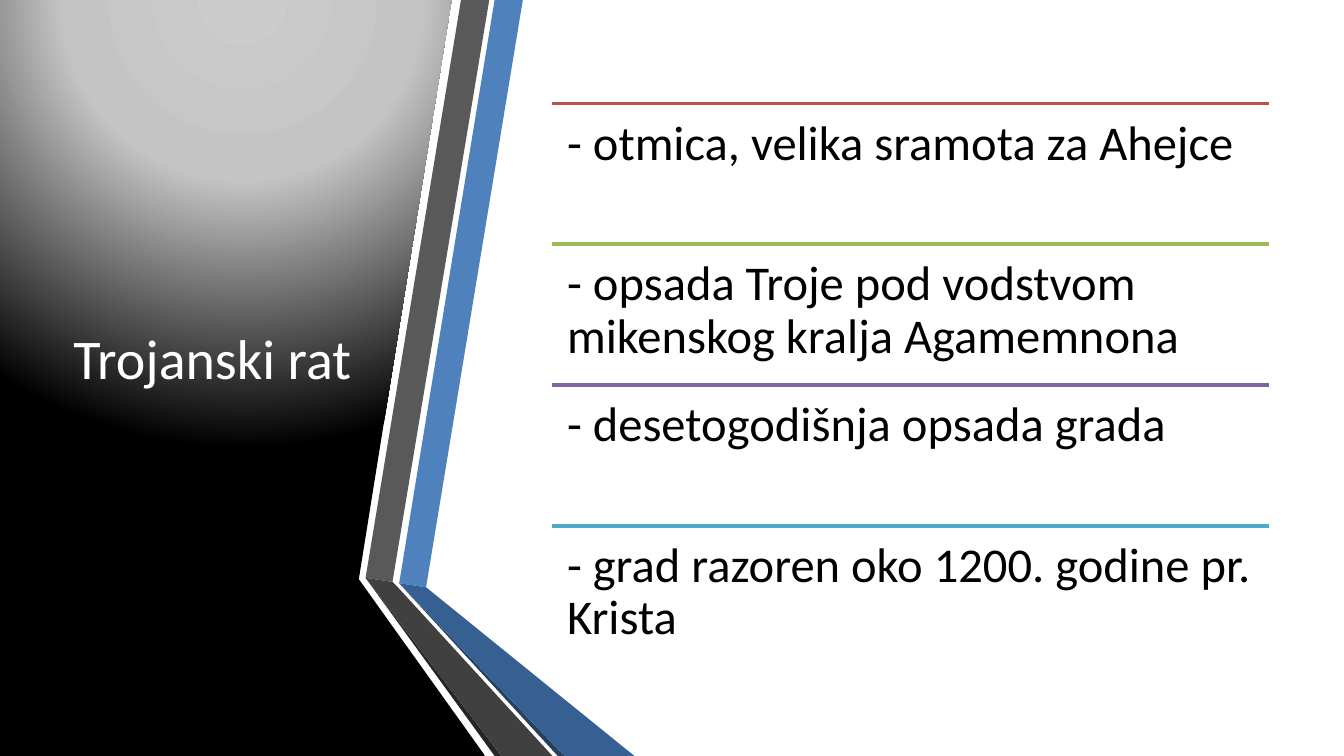
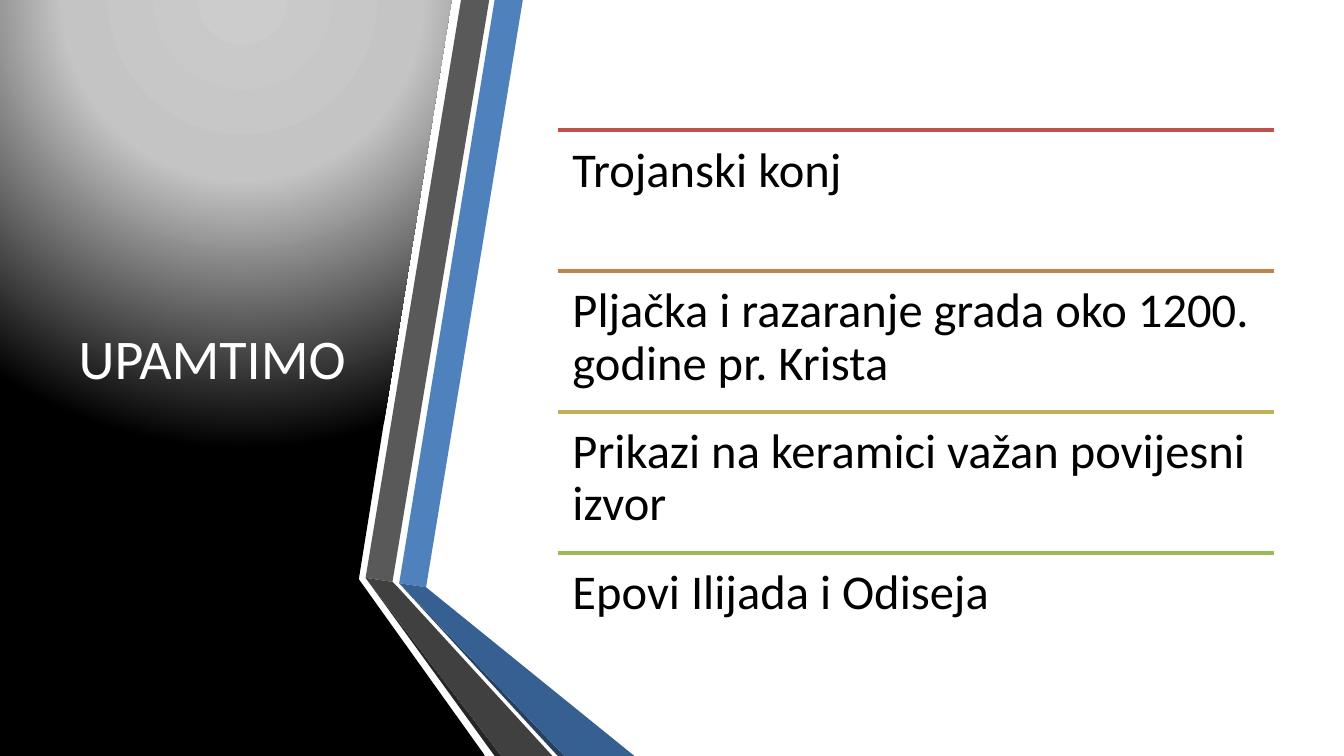
"""Build two history slides with a folded ribbon panel and ruled statements."""
from dataclasses import dataclass

from lxml import etree
from pptx import Presentation
from pptx.dml.color import RGBColor
from pptx.enum.shapes import MSO_CONNECTOR
from pptx.enum.text import MSO_ANCHOR, PP_ALIGN
from pptx.oxml import parse_xml
from pptx.oxml.ns import nsdecls, qn
from pptx.presentation import Presentation as PresentationType
from pptx.shapes.autoshape import Shape
from pptx.slide import Slide
from pptx.util import Inches, Pt

STRAIGHT = MSO_CONNECTOR.STRAIGHT
TOP, MIDDLE = MSO_ANCHOR.TOP, MSO_ANCHOR.MIDDLE
LEFT, CENTER = PP_ALIGN.LEFT, PP_ALIGN.CENTER

WHITE = RGBColor(0xFF, 0xFF, 0xFF)
BLACK = RGBColor(0x00, 0x00, 0x00)
BLUE = RGBColor(0x4F, 0x81, 0xBD)
BLUE_FOLD = RGBColor(0x37, 0x60, 0x92)
BLUE_SHADE = RGBColor(0x25, 0x40, 0x61)
GRAY = RGBColor(0x59, 0x59, 0x59)
GRAY_FOLD = RGBColor(0x40, 0x40, 0x40)
GRAY_SHADE = RGBColor(0x26, 0x26, 0x26)
RED = RGBColor(0xC0, 0x50, 0x4D)
ORANGE = RGBColor(0xBE, 0x83, 0x51)
OLIVE = RGBColor(0xBD, 0xB2, 0x55)
GREEN = RGBColor(0x9B, 0xBB, 0x59)
PURPLE = RGBColor(0x80, 0x64, 0xA2)
TEAL = RGBColor(0x4B, 0xAC, 0xC6)
PANEL_STOPS = (
    (0, RGBColor(0xCC, 0xCC, 0xCC)),
    (40, RGBColor(0xC4, 0xC4, 0xC4)),
    (100, BLACK),
)

FONT = "Calibri"
SLIDE_WIDTH = 10
SLIDE_HEIGHT = SLIDE_WIDTH * 9 / 16
LIST_WIDTH, LIST_HEIGHT, ROW_INSET = 5.33, 4.19, 0.11

Point = tuple[float, float]


@dataclass(frozen=True)
class Band:
    """One flat piece of the folded ribbon."""
    color: RGBColor
    points: tuple[Point, ...]


@dataclass(frozen=True)
class Statement:
    """A line of text under a coloured rule."""
    text: str
    color: RGBColor


@dataclass(frozen=True)
class Topic:
    """The title, list position and statements of one slide."""
    title: str
    left: float
    top: float
    statements: tuple[Statement, ...]


@dataclass(frozen=True)
class TextStyle:
    """The look of a text box."""
    size: int
    color: RGBColor
    alignment: PP_ALIGN
    anchor: MSO_ANCHOR
    side_inset: float
    top_inset: float
    line_spacing: float


TITLE_STYLE = TextStyle(30, WHITE, CENTER, MIDDLE, 0.1, 0.05, 1.0)
ROW_STYLE = TextStyle(26, BLACK, LEFT, TOP, ROW_INSET, ROW_INSET, 0.9)

PANEL = ((0, 0), (3.36, 0), (2.67, 4.31), (3.61, SLIDE_HEIGHT), (0, SLIDE_HEIGHT))
BANDS = (
    Band(BLUE, ((2.97, 4.34), (3.17, 4.37), (3.89, 0), (3.68, 0))),
    Band(GRAY, ((3.64, 0), (3.43, 0), (2.72, 4.3), (2.92, 4.33))),
    Band(GRAY_SHADE, ((2.72, 4.3), (3.68, SLIDE_HEIGHT), (3.73, SLIDE_HEIGHT))),
    Band(BLUE_SHADE, ((2.97, 4.34), (4.15, SLIDE_HEIGHT), (4.2, SLIDE_HEIGHT))),
    Band(BLUE_FOLD, ((2.97, 4.34), (4.2, SLIDE_HEIGHT), (4.72, SLIDE_HEIGHT), (3.17, 4.37))),
    Band(GRAY_FOLD, ((4.11, SLIDE_HEIGHT), (2.96, 4.37), (2.92, 4.33), (2.72, 4.3),
                     (3.73, SLIDE_HEIGHT))),
)

TOPICS = (
    Topic("Trojanski rat", 4.11, 0.77, (
        Statement("- otmica, velika sramota za Ahejce", RED),
        Statement("- opsada Troje pod vodstvom mikenskog kralja Agamemnona", GREEN),
        Statement("- desetogodišnja opsada grada", PURPLE),
        Statement("- grad razoren oko 1200. godine pr. Krista", TEAL),
    )),
    Topic("UPAMTIMO", 4.15, 0.97, (
        Statement("Trojanski konj", RED),
        Statement("Pljačka i razaranje grada oko 1200. godine pr. Krista", ORANGE),
        Statement("Prikazi na keramici važan povijesni izvor", OLIVE),
        Statement("Epovi Ilijada i Odiseja", GREEN),
    )),
)


def add_polygon(slide: Slide, points: tuple[Point, ...], color: RGBColor) -> Shape:
    """Draw a closed, filled outline without a border."""
    start, *corners = [(Inches(x), Inches(y)) for x, y in points]
    builder = slide.shapes.build_freeform(*start)
    builder.add_line_segments(corners, close=True)
    shape = builder.convert_to_shape()
    shape.shadow.inherit = False
    shape.fill.solid()
    shape.fill.fore_color.rgb = color
    shape.line.fill.background()
    return shape


def apply_glow(shape: Shape) -> None:
    """Replace a solid fill with a circular gradient centred above the shape."""
    stops = "".join(
        f'<a:gs pos="{position * 1000}"><a:srgbClr val="{color}"/></a:gs>'
        for position, color in PANEL_STOPS
    )
    gradient = parse_xml(
        f'<a:gradFill {nsdecls("a")} rotWithShape="1"><a:gsLst>{stops}</a:gsLst>'
        '<a:path path="circle"><a:fillToRect l="50000" t="-80000" r="50000" b="180000"/>'
        '</a:path></a:gradFill>'
    )
    properties = shape.element.spPr
    properties.replace(properties.find(qn("a:solidFill")), gradient)


def add_text(slide: Slide, text: str, left: float, top: float, width: float,
             height: float, style: TextStyle) -> None:
    """Add a wrapped text box holding one styled paragraph."""
    box = slide.shapes.add_textbox(Inches(left), Inches(top), Inches(width), Inches(height))
    frame = box.text_frame
    frame.word_wrap = True
    frame.vertical_anchor = style.anchor
    frame.margin_left = frame.margin_right = Inches(style.side_inset)
    frame.margin_top = frame.margin_bottom = Inches(style.top_inset)
    frame.text = text
    paragraph = frame.paragraphs[0]
    paragraph.alignment = style.alignment
    paragraph.line_spacing = style.line_spacing
    font = paragraph.runs[0].font
    font.name = FONT
    font.size = Pt(style.size)
    font.color.rgb = style.color


def add_rule(slide: Slide, left: float, top: float, color: RGBColor) -> None:
    """Draw the horizontal rule above a statement."""
    rule = slide.shapes.add_connector(
        STRAIGHT, Inches(left), Inches(top), Inches(left + LIST_WIDTH), Inches(top))
    rule.line.color.rgb = color
    rule.line.width = Pt(2)
    etree.SubElement(rule.element.spPr, qn("a:effectLst"))


def add_topic(presentation: PresentationType, topic: Topic) -> None:
    """Add a slide with the panel, ribbon, title and ruled statements."""
    slide = presentation.slides.add_slide(presentation.slide_layouts[6])
    apply_glow(add_polygon(slide, PANEL, BLACK))
    for band in BANDS:
        add_polygon(slide, band.points, band.color)
    add_text(slide, topic.title, 0.44, 0.56, 2.28, 4.19, TITLE_STYLE)
    row_height = LIST_HEIGHT / len(topic.statements)
    for index, statement in enumerate(topic.statements):
        top = topic.top + index * row_height
        add_rule(slide, topic.left, top, statement.color)
        add_text(slide, statement.text, topic.left, top, LIST_WIDTH, row_height, ROW_STYLE)


def main() -> None:
    """Create and save the presentation."""
    presentation = Presentation()
    presentation.slide_width = Inches(SLIDE_WIDTH)
    presentation.slide_height = Inches(SLIDE_HEIGHT)
    for topic in TOPICS:
        add_topic(presentation, topic)
    presentation.save("out.pptx")


if __name__ == "__main__":
    main()
